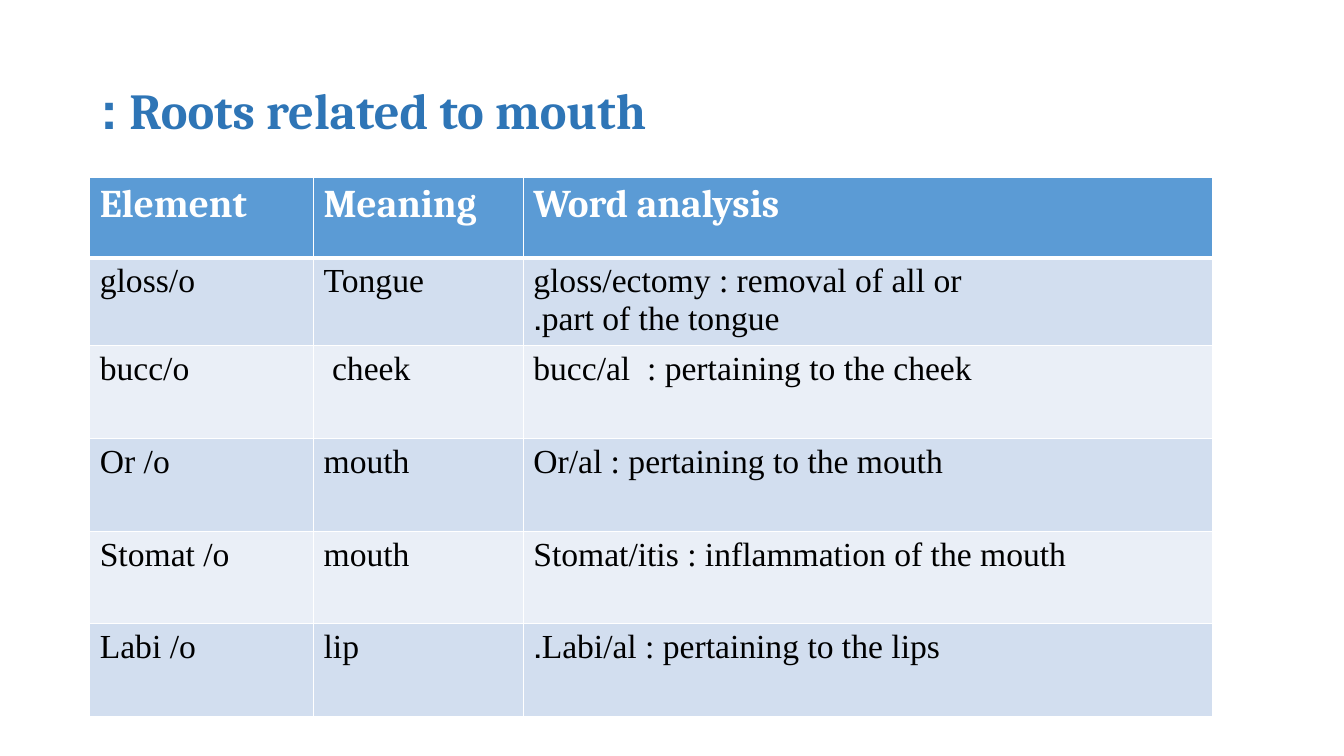
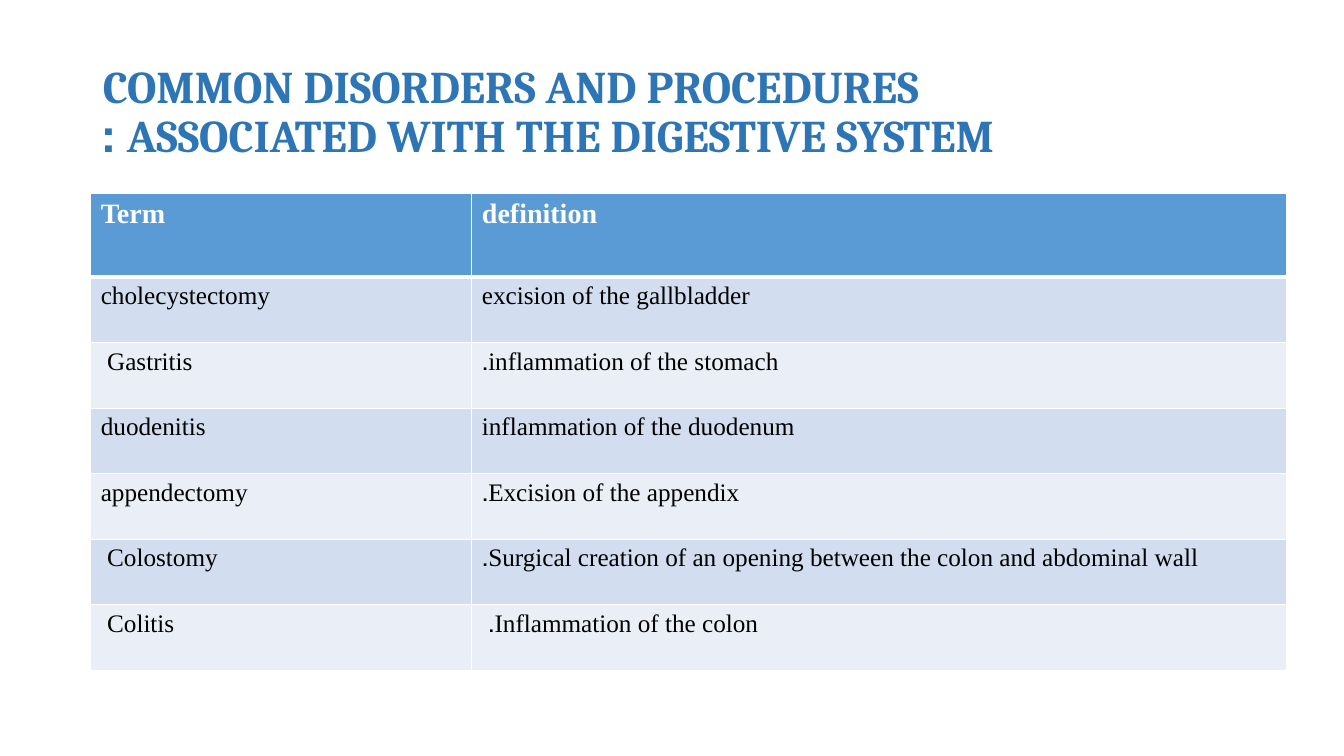
"""Builds two medical terminology slides, each with a title and a table."""
import copy

import pptx
import pptx.dml.color
import pptx.enum.text
import pptx.oxml
import pptx.oxml.ns
import pptx.util

EMU_PER_PX = 9144
TITLE_BLUE = pptx.dml.color.RGBColor(0x2E, 0x75, 0xB6)
HEADER_BLUE = pptx.dml.color.RGBColor(0x5B, 0x9B, 0xD5)
BANDS = (pptx.dml.color.RGBColor(0xD2, 0xDE, 0xEF),
         pptx.dml.color.RGBColor(0xEA, 0xEF, 0xF7))
WHITE = pptx.dml.color.RGBColor(0xFF, 0xFF, 0xFF)
BLACK = pptx.dml.color.RGBColor(0x00, 0x00, 0x00)
HEADING_FONT = "Cambria"
BODY_FONT = "Times New Roman"

MOUTH_ROOTS = [
    ("Element", "Meaning", "Word analysis"),
    ("gloss/o", "Tongue", "gloss/ectomy : removal of all or\npart of the tongue."),
    ("bucc/o", "cheek ", "bucc/al  : pertaining to the cheek"),
    ("Or /o", "mouth", "Or/al : pertaining to the mouth"),
    ("Stomat /o", "mouth", "Stomat/itis : inflammation of the mouth"),
    ("Labi /o", "lip", "Labi/al : pertaining to the lips."),
]
DISORDERS = [
    ("Term", "definition"),
    ("cholecystectomy", "excision of the gallbladder"),
    ("Gastritis ", "inflammation of the stomach."),
    ("duodenitis", "inflammation of the duodenum"),
    ("appendectomy", "Excision of the appendix."),
    ("Colostomy ",
     "Surgical creation of an opening between the colon and abdominal wall."),
    ("Colitis ", "Inflammation of the colon. "),
]


def px(length):
    return pptx.util.Emu(length * EMU_PER_PX)


def write_text(frame, text, *, size, color, font=BODY_FONT, bold=False, spacing=None):
    frame.text = text
    for paragraph in frame.paragraphs:
        paragraph.alignment = pptx.enum.text.PP_ALIGN.LEFT
        paragraph.line_spacing = spacing
        paragraph._p.get_or_add_pPr().set("rtl", "1")
        for run in paragraph.runs:
            run.font.size = pptx.util.Pt(size)
            run.font.name = font
            run.font.bold = bold
            run.font.color.rgb = color
        for line_break in paragraph._p.findall(pptx.oxml.ns.qn("a:br")):
            line_break.append(copy.deepcopy(paragraph.runs[0]._r.rPr))


def add_borders(cell, **widths):
    for side, points in widths.items():
        cell._tc.get_or_add_tcPr().append(pptx.oxml.parse_xml(
            f'<a:ln{side} {pptx.oxml.ns.nsdecls("a")} w="{pptx.util.Pt(points)}">'
            f'<a:solidFill><a:srgbClr val="{WHITE}"/></a:solidFill></a:ln{side}>'))


class Deck:
    def __init__(self):
        self.presentation = pptx.Presentation()
        self.presentation.slide_width = px(1333)
        self.presentation.slide_height = px(750)
        self.slide = None

    def add_slide(self, heading, size):
        title_only = self.presentation.slide_layouts[5]
        self.slide = self.presentation.slides.add_slide(title_only)
        title = self.slide.shapes.title
        title.left, title.top, title.width, title.height = map(px, (92, 40, 988, 145))
        frame = title.text_frame
        frame.word_wrap = True
        frame.auto_size = pptx.enum.text.MSO_AUTO_SIZE.NONE
        frame.vertical_anchor = pptx.enum.text.MSO_ANCHOR.MIDDLE
        write_text(frame, heading, size=size, color=TITLE_BLUE,
                   font=HEADING_FONT, bold=True, spacing=0.9)

    def add_table(self, rows, left, top, widths, heights, header_style, body_size):
        table = self.slide.shapes.add_table(
            len(rows), len(widths), px(left), px(top),
            px(sum(widths)), px(sum(heights))).table
        for column, width in zip(table.columns, widths):
            column.width = px(width)
        for index, (row, height) in enumerate(zip(rows, heights)):
            table.rows[index].height = px(height)
            is_header = index == 0
            style = header_style if is_header else {"size": body_size, "color": BLACK}
            fill = HEADER_BLUE if is_header else BANDS[(index - 1) % 2]
            for cell, text in zip(table.rows[index].cells, row):
                add_borders(cell, L=1, R=1, T=3 if index == 1 else 1,
                            B=3 if is_header else 1)
                cell.fill.solid()
                cell.fill.fore_color.rgb = fill
                write_text(cell.text_frame, text, **style)


def main():
    deck = Deck()
    deck.add_slide("Roots related to mouth :", size=36)
    deck.add_table(MOUTH_ROOTS, 89, 176, (222, 208, 684), (80, 87) + (92,) * 4,
                   {"size": 28, "color": WHITE, "font": HEADING_FONT, "bold": True}, 24)
    deck.add_slide("COMMON DISORDERS AND PROCEDURES\v"
                   "ASSOCIATED WITH THE DIGESTIVE SYSTEM :", size=32.4)
    deck.add_table(DISORDERS, 90, 192, (378, 808), (83,) + (65,) * 6,
                   {"size": 20, "color": WHITE, "bold": True}, 18)
    deck.presentation.save("out.pptx")


if __name__ == "__main__":
    main()
